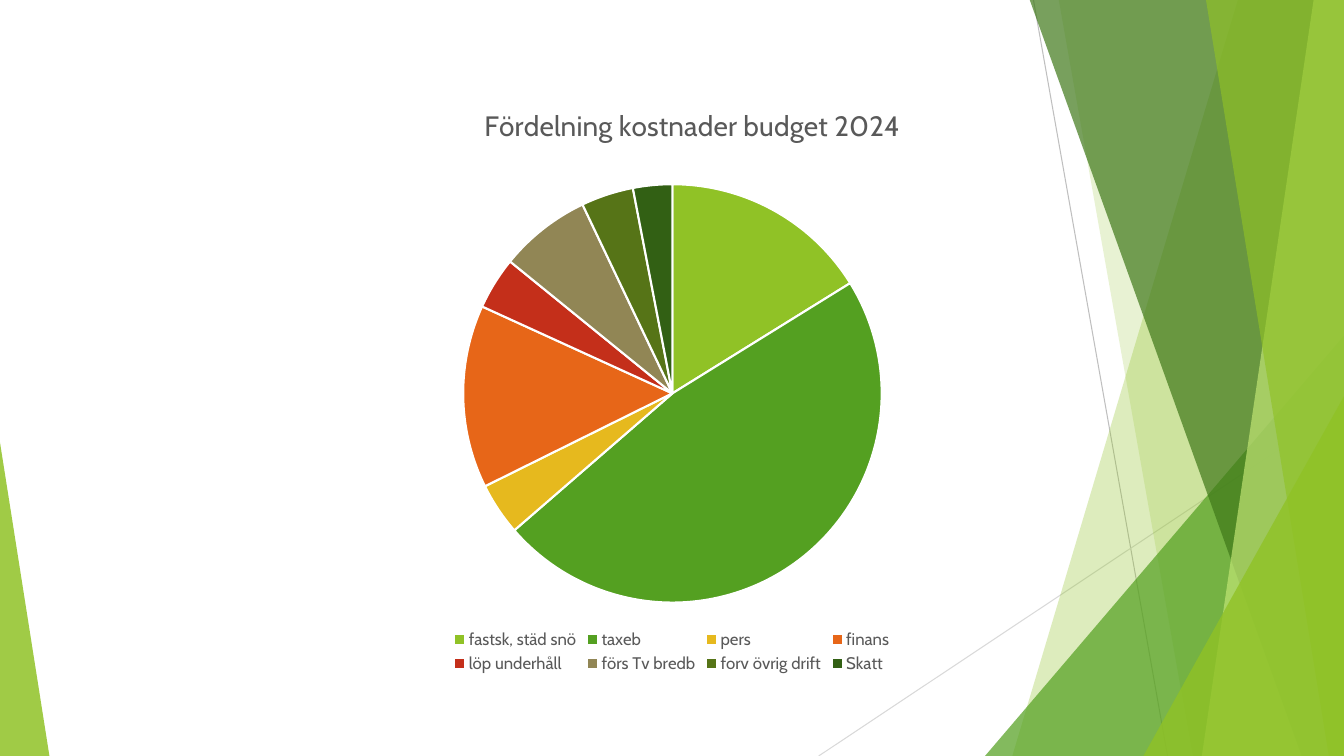
from lxml.etree import SubElement
from pptx import Presentation
from pptx.chart.data import CategoryChartData
from pptx.dml.color import RGBColor
from pptx.enum.chart import XL_CHART_TYPE, XL_LEGEND_POSITION
from pptx.enum.shapes import MSO_CONNECTOR, MSO_SHAPE
from pptx.oxml import parse_xml
from pptx.oxml.ns import nsdecls, qn
from pptx.util import Inches, Pt

WIDTH, HEIGHT, TOP = 13.33, 7.5, -0.01
FONT = "Cabin"
LIME = RGBColor(0x90, 0xC2, 0x26)
GREEN = RGBColor(0x54, 0xA0, 0x21)
FOREST = RGBColor(0x3F, 0x78, 0x19)
PALE = RGBColor(0xC0, 0xE4, 0x74)
GOLD = RGBColor(0xE6, 0xB9, 0x1E)
ORANGE = RGBColor(0xE7, 0x66, 0x18)
RED = RGBColor(0xC4, 0x2F, 0x1A)
KHAKI = RGBColor(0x91, 0x86, 0x55)
OLIVE = RGBColor(0x56, 0x74, 0x17)
PINE = RGBColor(0x32, 0x60, 0x14)
GREY = RGBColor(0x59, 0x59, 0x59)
SILVER = RGBColor(0xBF, 0xBF, 0xBF)
MIST = RGBColor(0xD9, 0xD9, 0xD9)
WHITE = RGBColor(0xFF, 0xFF, 0xFF)

COSTS = [
    ("fastsk, städ snö", 16, LIME),
    ("taxeb", 47, GREEN),
    ("pers", 4, GOLD),
    ("finans", 14, ORANGE),
    ("löp underhåll", 4, RED),
    ("förs Tv bredb", 7, KHAKI),
    ("forv övrig drift", 4, OLIVE),
    ("Skatt", 3, PINE),
]


def paint(shape, color, alpha):
    shape.shadow.inherit = False
    shape.fill.solid()
    shape.fill.fore_color.rgb = color
    shape.line.fill.background()
    tint = shape.fill._xPr.find(qn("a:solidFill"))[0]
    SubElement(tint, qn("a:alpha")).set("val", str(alpha * 1000))


def add_line(slide, start, end, color):
    ends = [Inches(v) for v in (*start, *end)]
    line = slide.shapes.add_connector(MSO_CONNECTOR.STRAIGHT, *ends)
    line.line.color.rgb = color
    line.line.width = Pt(0.75)
    SubElement(line._element.spPr, qn("a:effectLst"))


def add_band(slide, top_x, base_x, color, alpha):
    points = [(top_x, TOP), (WIDTH, TOP), (WIDTH, HEIGHT), (base_x, HEIGHT)]
    points = [(Inches(x), Inches(y)) for x, y in points]
    form = slide.shapes.build_freeform(*points[0])
    form.add_line_segments(points[1:], close=True)
    paint(form.convert_to_shape(), color, alpha)


def add_wedge(slide, left, top, width, tip, color, alpha):
    box = [Inches(v) for v in (left, top, width, HEIGHT - top)]
    wedge = slide.shapes.add_shape(MSO_SHAPE.ISOSCELES_TRIANGLE, *box)
    wedge.adjustments[0] = tip
    paint(wedge, color, alpha)


def add_text(frame, text, size, color):
    run = frame.paragraphs[0].add_run()
    run.text = text
    style(run.font, size=size, color=color)


def style(font, size, color):
    font.name = FONT
    font.size = Pt(size)
    font.bold = False
    font.color.rgb = color


def layout(target, **places):
    tags = "".join(f'<c:{key} val="{val}"/>' for key, val in places.items())
    return parse_xml(f'<c:{target} {nsdecls("c")}><c:manualLayout>{tags}'
                     f'</c:manualLayout></c:{target}>')


def place(element, **places):
    for old in element.findall(qn("c:layout")):
        element.remove(old)
    spot = 1 if element.find(qn("c:tx")) is not None else 0
    element.insert(spot, layout("layout", **places))


def add_pie(slide):
    data = CategoryChartData()
    data.categories = [name for name, _, _ in COSTS]
    data.add_series("Series 1", [value for _, value, _ in COSTS])
    box = [Inches(v) for v in (2.22, 0.79, 8.89, 5.93)]
    chart = slide.shapes.add_chart(XL_CHART_TYPE.PIE, *box, data).chart
    style(chart.font, size=10, color=GREY)

    chart.has_title = True
    add_text(chart.chart_title.text_frame,
             "Fördelning kostnader budget 2024", size=20, color=GREY)
    chart.chart_title.include_in_layout = False
    place(chart.chart_title._element,
          xMode="edge", yMode="edge", x=0.285, y=0.035)

    chart.has_legend = True
    chart.legend.position = XL_LEGEND_POSITION.BOTTOM
    chart.legend.include_in_layout = False
    style(chart.legend.font, size=12, color=GREY)

    plot = chart.plots[0]
    plot.vary_by_categories = True
    for index, (_, _, color) in enumerate(COSTS):
        slice_ = plot.series[0].points[index].format
        slice_.fill.solid()
        slice_.fill.fore_color.rgb = color
        slice_.line.color.rgb = WHITE
        slice_.line.width = Pt(1.5)
    place(chart._chartSpace.chart.plotArea, layoutTarget="inner",
          xMode="edge", yMode="edge", x=0.267, y=0.175, w=0.467, h=0.7)


def main():
    deck = Presentation()
    deck.slide_width, deck.slide_height = Inches(WIDTH), Inches(HEIGHT)
    slide = deck.slides.add_slide(deck.slide_layouts[6])
    add_line(slide, (10.25, 0), (11.58, HEIGHT), SILVER)
    add_line(slide, (WIDTH, 4.03), (8.12, HEIGHT), MIST)
    add_band(slide, 12.28, 10.04, LIME, 30)
    add_band(slide, 10.5, 11.83, LIME, 20)
    add_wedge(slide, 9.77, 3.33, 3.56, 1, GREEN, 72)
    add_band(slide, 10.21, 12.91, FOREST, 70)
    add_band(slide, 13.03, 11.92, PALE, 70)
    add_band(slide, 11.96, 13.18, LIME, 65)
    add_wedge(slide, 11.34, 3.93, 1.99, 1, LIME, 80)
    add_wedge(slide, 0, 4.39, 0.49, 0, LIME, 85)
    add_pie(slide)
    deck.save("out.pptx")


if __name__ == "__main__":
    main()
